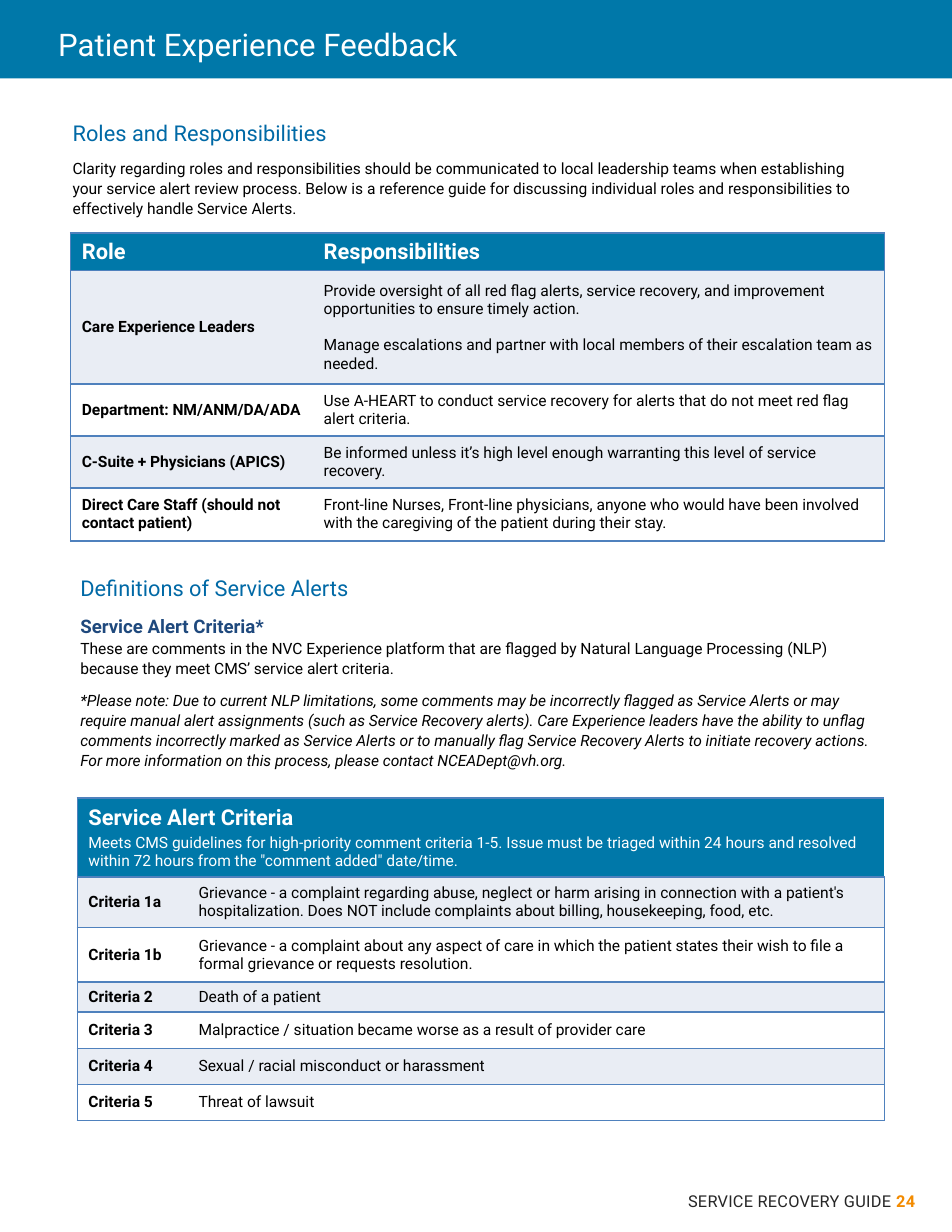
from dataclasses import dataclass

from lxml.etree import SubElement
from pptx import Presentation
from pptx.dml.color import RGBColor as Color
from pptx.enum.shapes import MSO_SHAPE as Shape
from pptx.enum.text import MSO_ANCHOR as Anchor, PP_ALIGN as Align
from pptx.oxml.ns import qn
from pptx.util import Pt


@dataclass(frozen=True)
class Theme:
    font: str = "Roboto"
    band: str = "0078A9"
    heading: str = "0069A6"
    subheading: str = "1F497D"
    text: str = "000000"
    white: str = "FFFFFF"
    stripe: str = "E9EDF4"
    border: str = "4F81BD"
    footer: str = "262626"
    page: str = "F38B00"
    title_size: float = 20
    heading_size: float = 14
    subheading_size: float = 12
    footer_size: float = 10.5
    body_size: float = 10


theme = Theme()


def format_run(run, size, color, bold=False, italic=False):
    run.font.name = theme.font
    run.font.size = Pt(size)
    run.font.color.rgb = Color.from_string(color)
    run.font.bold = bold
    run.font.italic = italic


def add_grid(left, top, widths, heights, rows, gaps):
    frame = slide.shapes.add_table(
        len(heights), len(widths), Pt(left), Pt(top), Pt(sum(widths)), Pt(sum(heights)))
    table = frame.table
    for column, width in zip(table.columns, widths):
        column.width = Pt(width)
    for row, height in zip(table.rows, heights):
        row.height = Pt(height)
    for row_index, texts in enumerate(rows):
        header = row_index == 0
        fill = theme.band if header else theme.stripe if row_index % 2 else theme.white
        if len(texts) < len(widths):
            table.cell(row_index, 0).merge(table.cell(row_index, len(widths) - 1))
        for column_index in range(len(widths)):
            cell = table.cell(row_index, column_index)
            cell.fill.solid()
            cell.fill.fore_color.rgb = Color.from_string(fill)
            cell.vertical_anchor = Anchor.MIDDLE
            if column_index < len(texts):
                cell.text_frame.text = texts[column_index]
            for index, paragraph in enumerate(cell.text_frame.paragraphs):
                if index:
                    paragraph.space_before = Pt(gaps[row_index])
                for run in paragraph.runs:
                    lead = header and index == 0
                    format_run(run, theme.heading_size if lead else theme.body_size,
                               theme.white if header else theme.text,
                               lead or (not header and column_index == 0))
            properties = cell._tc.get_or_add_tcPr()
            visible = (column_index == 0, column_index == len(widths) - 1, True, True)
            for index, side in enumerate(("lnL", "lnR", "lnT", "lnB")):
                line = SubElement(properties, qn(f"a:{side}"), w=str(Pt(1)))
                if visible[index]:
                    solid = SubElement(line, qn("a:solidFill"))
                    SubElement(solid, qn("a:srgbClr"), val=theme.border)
                else:
                    SubElement(line, qn("a:noFill"))
                properties.insert(index, line)


presentation = Presentation()
presentation.slide_width = Pt(612)
presentation.slide_height = Pt(792)
slide = presentation.slides.add_slide(presentation.slide_layouts[5])

title = slide.shapes.title
title.left, title.top, title.width, title.height = Pt(37.4), Pt(16), Pt(538.6), Pt(24.5)
title_frame = title.text_frame
title_frame.text = "Patient Experience Feedback"
title_frame.vertical_anchor = Anchor.MIDDLE
title_frame.margin_left = title_frame.margin_right = 0
title_frame.margin_top = title_frame.margin_bottom = 0
title_frame.paragraphs[0].alignment = Align.LEFT
format_run(title_frame.paragraphs[0].runs[0], theme.title_size, theme.white)

band = slide.shapes.add_shape(Shape.RECTANGLE, 0, 0, Pt(612), Pt(50.4))
band.shadow.inherit = False
band.fill.solid()
band.fill.fore_color.rgb = Color.from_string(theme.band)
band.line.fill.background()
title.element.addprevious(band.element)

heading = (theme.heading_size, theme.heading)
subheading = (theme.subheading_size, theme.subheading, True)
body = (theme.body_size, theme.text)
note = (theme.body_size, theme.text, False, True)

sections = [
    (39.6, 72, 529.2, 71.3, [
        ("Roles and Responsibilities", heading, 8),
        ("Clarity regarding roles and responsibilities should be communicated to local leadership "
         "teams when establishing your service alert review process. Below is a reference guide "
         "for discussing individual roles and responsibilities to effectively handle Service "
         "Alerts.", body, 8),
    ]),
    (44.6, 365, 522.7, 134, [
        ("Definitions of Service Alerts", heading, 8),
        ("Service Alert Criteria*", subheading, 0),
        ("These are comments in the NVC Experience platform that are flagged by Natural Language "
         "Processing (NLP) because they meet CMS’ service alert criteria.", body, 8),
        ("*Please note: Due to current NLP limitations, some comments may be incorrectly flagged "
         "as Service Alerts or may require manual alert assignments (such as Service Recovery "
         "alerts). Care Experience leaders have the ability to unflag comments incorrectly marked "
         "as Service Alerts or to manually flag Service Recovery Alerts to initiate recovery "
         "actions. For more information on this process, please contact NCEADept@vh.org.",
         note, 8),
    ]),
]
for left, top, width, height, entries in sections:
    text_frame = slide.shapes.add_textbox(Pt(left), Pt(top), Pt(width), Pt(height)).text_frame
    text_frame.word_wrap = True
    text_frame.text = "\n".join(text for text, style, gap in entries)
    for paragraph, (text, style, gap) in zip(text_frame.paragraphs, entries):
        paragraph.line_spacing = 1.07
        paragraph.space_after = Pt(gap)
        format_run(paragraph.runs[0], *style)

add_grid(45.4, 149.8, [155.5, 367.9], [24, 73, 33.5, 33.5, 34], [
    ("Role", "Responsibilities"),
    ("Care Experience Leaders",
     "Provide oversight of all red flag alerts, service recovery, and improvement opportunities "
     "to ensure timely action.\nManage escalations and partner with local members of their "
     "escalation team as needed."),
    ("Department: NM/ANM/DA/ADA",
     "Use A-HEART to conduct service recovery for alerts that do not meet red flag alert "
     "criteria."),
    ("C-Suite + Physicians (APICS)",
     "Be informed unless it’s high level enough warranting this level of service recovery."),
    ("Direct Care Staff (should not contact patient)",
     "Front-line Nurses, Front-line physicians, anyone who would have been involved with the "
     "caregiving of the patient during their stay."),
], {1: 12})

add_grid(49.7, 513, [70.8, 448], [50.8, 32.6, 35, 19.2, 23.2, 23.2, 23.2], [
    ("Service Alert Criteria\nMeets CMS guidelines for high-priority comment criteria 1-5. Issue "
     "must be triaged within 24 hours and resolved within 72 hours from the \"comment added\" "
     "date/time.",),
    ("Criteria 1a",
     "Grievance - a complaint regarding abuse, neglect or harm arising in connection with a "
     "patient's hospitalization. Does NOT include complaints about billing, housekeeping, food, "
     "etc."),
    ("Criteria 1b",
     "Grievance - a complaint about any aspect of care in which the patient states their wish to "
     "file a formal grievance or requests resolution."),
    ("Criteria 2", "Death of a patient"),
    ("Criteria 3", "Malpractice / situation became worse as a result of provider care"),
    ("Criteria 4", "Sexual / racial misconduct or harassment"),
    ("Criteria 5", "Threat of lawsuit"),
], {0: 2.4})

footer = slide.shapes.add_textbox(Pt(18), Pt(762), Pt(577.4), Pt(20))
footer.text_frame.word_wrap = True
paragraph = footer.text_frame.paragraphs[0]
paragraph.alignment = Align.RIGHT
for text, color, bold in (("SERVICE RECOVERY GUIDE ", theme.footer, False),
                          ("24", theme.page, True)):
    run = paragraph.add_run()
    run.text = text
    format_run(run, theme.footer_size, color, bold)
for run_properties in footer.element.iter(qn("a:rPr")):
    run_properties.set("spc", "20")

presentation.save("out.pptx")
